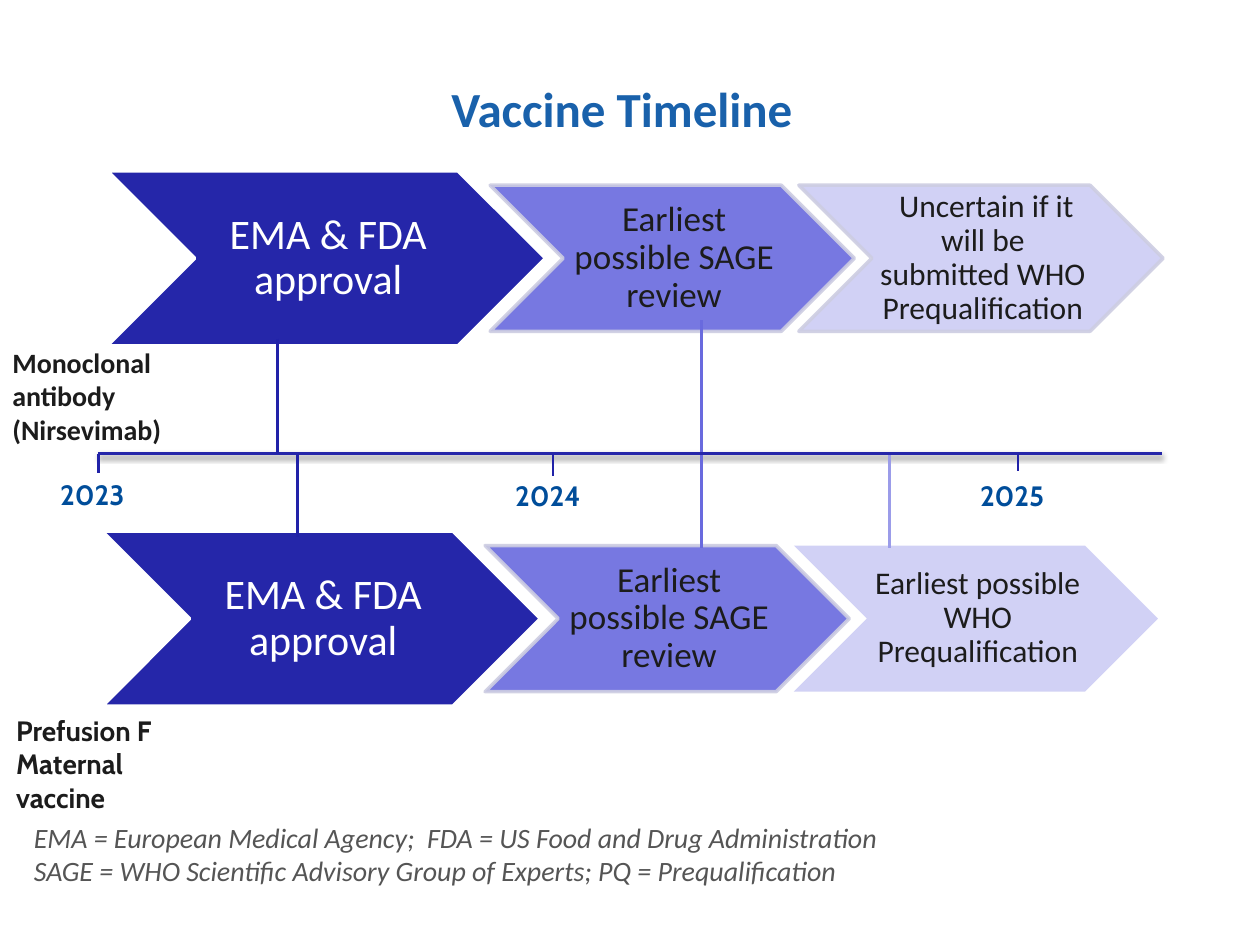
"""Build the vaccine timeline slide: two approval tracks around a dated axis."""
from dataclasses import dataclass
from typing import Any, NamedTuple, Optional

from lxml import etree
from pptx import Presentation
from pptx import util as u
from pptx.dml import color as dml
from pptx.enum import shapes, text
from pptx.oxml import ns

COLUMNS, ROWS = 100, 75
CELL = u.Inches(0.1)
OVERLAP = 4.4
AXIS_ROW = 36


@dataclass(frozen=True)
class Theme:
    """Colours, fonts and type sizes of the slide."""
    body: str = "Calibri"
    accent: str = "Cabin"
    title: str = "1961AB"
    ink: str = "1C1C1C"
    white: str = "FFFFFF"
    year: str = "004D9A"
    note: str = "555555"
    navy: str = "2526A9"
    tick: str = "2122A8"
    violet: str = "696ADE"
    lilac: str = "9B9CE9"
    pale: str = "CDCDF4"
    edge: str = "CDCDE2"
    title_size: int = 28
    label_size: int = 16
    opacity: int = 90


THEME = Theme()


class Box(NamedTuple):
    """A place on the grid, in columns and rows."""
    column: float
    row: float
    width: float
    height: float


class Stage(NamedTuple):
    """The look of one step in a track."""
    width: float
    height: float
    size: int
    fill: str
    ink: str
    edge: Optional[str]
    opacity: int


class Track(NamedTuple):
    """A row of steps that share a centre line."""
    column: float
    centre: float
    steps: list


class Label(NamedTuple):
    """A free piece of text."""
    box: Box
    lines: list
    color: str
    font: dict
    align: Any = text.PP_ALIGN.LEFT
    anchor: Any = text.MSO_ANCHOR.TOP


class Rule(NamedTuple):
    """A straight line between two grid points."""
    start: tuple
    end: tuple
    color: str
    weight: float = 1.5
    shadow: bool = False


def cells(*lengths: float) -> list:
    """Turn grid lengths into slide units."""
    return [round(length * CELL) for length in lengths]


def apply(target: Any, formats: dict) -> None:
    """Set every format value on the target."""
    for name, value in formats.items():
        setattr(target, name, value)


def type_font(size: int, name: str = THEME.body, **more: bool) -> dict:
    """Give the format values of a font."""
    return {"size": u.Pt(size), "name": name, **more}


def paint(fill: Any, color: str, opacity: int) -> None:
    """Fill with a solid colour, see-through where asked."""
    fill.solid()
    fill.fore_color.rgb = dml.RGBColor.from_string(color)
    if opacity < 100:
        tint = fill._xPr.find(ns.qn("a:solidFill"))[0]
        etree.SubElement(tint, ns.qn("a:alpha"), val=str(opacity * 1000))


def write(frame: Any, lines: list, color: str, font: dict, paragraph_format: dict) -> None:
    """Write one paragraph for each line."""
    for index, line in enumerate(lines):
        paragraph = frame.add_paragraph() if index else frame.paragraphs[0]
        run = paragraph.add_run()
        run.text = line
        apply(paragraph, paragraph_format)
        apply(run.font, font)
        run.font.color.rgb = dml.RGBColor.from_string(color)


def draw_step(slide: Any, box: Box, stage: Stage, wording: str) -> None:
    """Draw one chevron with its text."""
    chevron = slide.shapes.add_shape(shapes.MSO_SHAPE.CHEVRON, *cells(*box))
    chevron.shadow.inherit = False
    paint(chevron.fill, stage.fill, stage.opacity)
    if stage.edge:
        paint(chevron.line.fill, stage.edge, stage.opacity)
        chevron.line.width = u.Pt(2)
    else:
        chevron.line.fill.background()
    apply(chevron.text_frame, {
        "word_wrap": True, "vertical_anchor": text.MSO_ANCHOR.MIDDLE,
        "margin_left": u.Inches(0.03), "margin_right": 0,
        "margin_top": u.Inches(0.02), "margin_bottom": u.Inches(0.02)})
    write(chevron.text_frame, [wording], stage.ink, type_font(stage.size),
          {"alignment": text.PP_ALIGN.CENTER, "line_spacing": 0.9})


def draw_track(slide: Any, track: Track) -> None:
    """Lay the steps side by side, each notched into the one before."""
    column = track.column
    for stage, wording in track.steps:
        top = track.centre - stage.height / 2
        draw_step(slide, Box(column, top, stage.width, stage.height), stage, wording)
        column += stage.width - OVERLAP


def draw_label(slide: Any, label: Label) -> None:
    """Draw one text box."""
    frame = slide.shapes.add_textbox(*cells(*label.box)).text_frame
    apply(frame, {"word_wrap": True, "vertical_anchor": label.anchor})
    write(frame, label.lines, label.color, label.font, {"alignment": label.align})


def draw_rule(slide: Any, rule: Rule) -> None:
    """Draw one line, with a soft shadow where asked."""
    line = slide.shapes.add_connector(shapes.MSO_CONNECTOR.STRAIGHT, *cells(*rule.start, *rule.end))
    line.line.color.rgb = dml.RGBColor.from_string(rule.color)
    line.line.width = u.Pt(rule.weight)
    effects = etree.SubElement(line._element.spPr, ns.qn("a:effectLst"))
    if rule.shadow:
        shadow = etree.SubElement(effects, ns.qn("a:outerShdw"), blurRad=str(u.Pt(3.1)),
                                  dist=str(u.Pt(1.6)), dir="5400000", rotWithShape="0")
        black = etree.SubElement(shadow, ns.qn("a:srgbClr"), val="000000")
        etree.SubElement(black, ns.qn("a:alpha"), val="38000")


APPROVAL = Stage(34.8, 13.9, 24, THEME.navy, THEME.white, THEME.white, 100)
REVIEW = Stage(28.9, 11.6, 20, THEME.violet, THEME.ink, THEME.edge, THEME.opacity)
UNCERTAIN = Stage(28.9, 11.6, 18, THEME.pale, THEME.ink, THEME.edge, THEME.opacity)
PREQUALIFIED = UNCERTAIN._replace(edge=None)
OPENING = [(APPROVAL, "EMA & FDA approval"), (REVIEW, "Earliest possible SAGE review")]
TRACKS = [
    Track(8.5, 20.5, OPENING + [(UNCERTAIN, " Uncertain if it will be submitted WHO Prequalification")]),
    Track(8.1, 49.1, OPENING + [(PREQUALIFIED, "Earliest possible WHO Prequalification")]),
]
BOLD = type_font(THEME.label_size, bold=True)
BOLD_ACCENT = type_font(THEME.label_size, THEME.accent, bold=True)
YEARS = [("2023", 7.8, 37.4, 37.5), ("2024", 43.9, 37.5, 37.8), ("2025", 80.8, 37.5, 37.4)]
LABELS = [
    Label(Box(8.1, 4.1, 82.5, 8.9), ["Vaccine Timeline"], THEME.title,
          type_font(THEME.title_size, bold=True), text.PP_ALIGN.CENTER, text.MSO_ANCHOR.MIDDLE),
    Label(Box(0, 26.9, 15.5, 9.1), ["Monoclonal antibody", "(Nirsevimab)"], THEME.ink, BOLD),
    Label(Box(0.3, 56.1, 15.5, 9.1), ["Prefusion F Maternal vaccine"], THEME.ink, BOLD_ACCENT),
    Label(Box(1.7, 64.6, 79.1, 6.4),
          ["EMA = European Medical Agency;  FDA = US Food and Drug Administration",
           "SAGE = WHO Scientific Advisory Group of Experts; PQ = Prequalification"],
          THEME.note, type_font(THEME.label_size, italic=True)),
] + [Label(Box(column - 4, top, 8, 3.7), [year], THEME.year, BOLD_ACCENT)
     for year, column, top, _ in YEARS]
DATES = [(22, 26.9, AXIS_ROW, THEME.tick), (23.6, AXIS_ROW, 42.6, THEME.tick),
         (55.7, 25.4, 35.9, THEME.violet), (55.7, 36.1, 43.5, THEME.violet),
         (70.6, 36.1, 43.5, THEME.lilac)]
TICKS = [(column, AXIS_ROW, end, THEME.tick) for _, column, _, end in YEARS]
RULES = [Rule((7.8, AXIS_ROW), (92.2, AXIS_ROW), THEME.navy, 2, True)] + [
    Rule((column, start), (column, end), color) for column, start, end, color in TICKS + DATES]


def main() -> None:
    """Build and save the slide."""
    deck = Presentation()
    deck.slide_width, deck.slide_height = cells(COLUMNS, ROWS)
    slide = deck.slides.add_slide(deck.slide_layouts[6])
    for draw, parts in ((draw_track, TRACKS), (draw_label, LABELS), (draw_rule, RULES)):
        for part in parts:
            draw(slide, part)
    deck.save("out.pptx")


if __name__ == "__main__":
    main()
